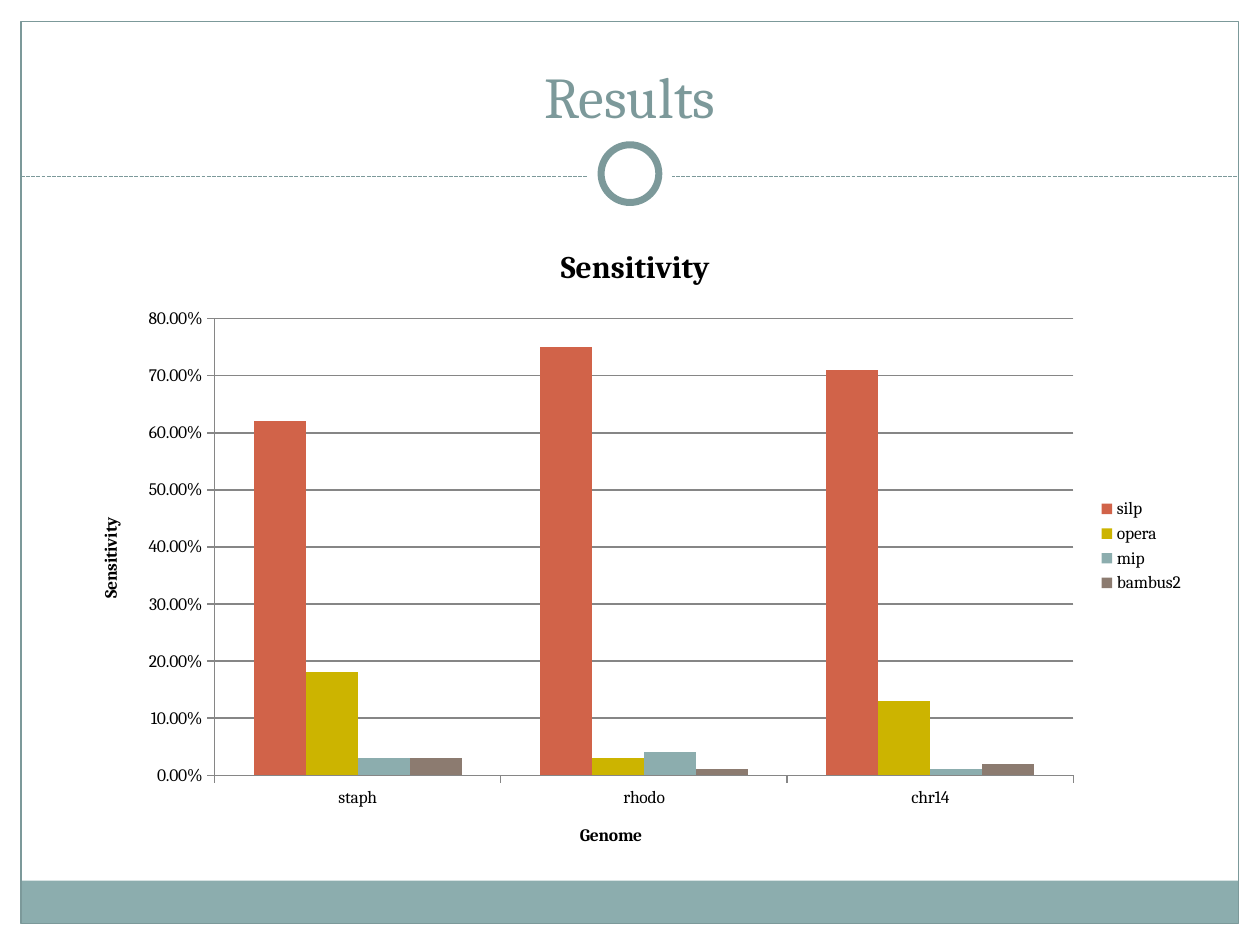
from dataclasses import dataclass

from lxml.etree import SubElement
from pptx import Presentation
from pptx.chart.data import CategoryChartData
from pptx.dml.color import RGBColor
from pptx.enum.chart import XL_CHART_TYPE, XL_LEGEND_POSITION, XL_TICK_MARK
from pptx.enum.dml import MSO_LINE
from pptx.enum.shapes import MSO_CONNECTOR, MSO_SHAPE
from pptx.enum.text import MSO_ANCHOR, PP_ALIGN
from pptx.oxml.ns import qn
from pptx.util import Pt


@dataclass(frozen=True)
class Theme:
    """Colours, font and type sizes of the slide."""
    font: str = "Cambria"
    accent: str = "7C999A"
    band: str = "8CADAE"
    paper: str = "FFFFFF"
    ink: str = "000000"
    grid: str = "868686"
    series: tuple = ("D16349", "CCB400", "8CADAE", "8C7B70")
    title_size: float = 33
    chart_title_size: float = 18
    chart_size: float = 10
    thin: float = 0.75
    ring: float = 4


THEME = Theme()
GENOMES = ("staph", "rhodo", "chr14")
SENSITIVITY = {
    "silp": (0.62, 0.75, 0.71),
    "opera": (0.18, 0.03, 0.13),
    "mip": (0.03, 0.04, 0.01),
    "bambus2": (0.03, 0.01, 0.02),
}


def style_font(font, size, color, bold=False):
    """Set the theme font with a size, colour and weight."""
    font.name = THEME.font
    font.size = Pt(size)
    font.bold = bold
    font.color.rgb = RGBColor.from_string(color)


def write_text(frame, text, size, color=THEME.ink, bold=False, align=PP_ALIGN.CENTER):
    """Write one formatted line into a text frame."""
    paragraph = frame.paragraphs[0]
    paragraph.alignment = align
    run = paragraph.add_run()
    run.text = text
    style_font(run.font, size, color, bold)


def style_line(line, color, width):
    """Give a line a solid colour and a width."""
    line.color.rgb = RGBColor.from_string(color)
    line.width = Pt(width)


def add_block(slide, kind, box, fill=None, line=None, width=THEME.thin):
    """Add a preset shape with an optional fill and outline."""
    shape = slide.shapes.add_shape(kind, *map(Pt, box))
    shape.shadow.inherit = False
    if fill:
        shape.fill.solid()
        shape.fill.fore_color.rgb = RGBColor.from_string(fill)
    else:
        shape.fill.background()
    if line:
        style_line(shape.line, line, width)
    else:
        shape.line.fill.background()


def add_frame(slide, box, band_height):
    """Draw the page border and the band along its foot."""
    left, top, width, height = box
    band = (left, top + height - band_height, width, band_height)
    add_block(slide, MSO_SHAPE.RECTANGLE, band, fill=THEME.band)
    add_block(slide, MSO_SHAPE.RECTANGLE, box, line=THEME.accent)


def add_divider(slide, left, width, rule_y, ring_y):
    """Draw the dashed rule with a ring at its centre."""
    rule = slide.shapes.add_connector(
        MSO_CONNECTOR.STRAIGHT, Pt(left), Pt(rule_y), Pt(left + width), Pt(rule_y))
    style_line(rule.line, THEME.accent, THEME.thin)
    rule.line.dash_style = MSO_LINE.SQUARE_DOT
    SubElement(rule._element.spPr, qn("a:effectLst"))
    center = left + width / 2
    for diameter, outline in ((48, None), (33, THEME.accent)):
        box = (center - diameter / 2, ring_y - diameter / 2, diameter, diameter)
        add_block(slide, MSO_SHAPE.OVAL, box, THEME.paper, outline, THEME.ring)


def add_heading(slide, box, text):
    """Place the slide heading at the foot of its box."""
    frame = slide.shapes.add_textbox(*map(Pt, box)).text_frame
    frame.word_wrap = True
    frame.vertical_anchor = MSO_ANCHOR.BOTTOM
    write_text(frame, text, THEME.title_size, THEME.accent)


def style_axis(axis, title):
    """Title an axis and style its line and ticks."""
    write_text(axis.axis_title.text_frame, title, THEME.chart_size, bold=True)
    axis.major_tick_mark = XL_TICK_MARK.OUTSIDE
    axis.minor_tick_mark = XL_TICK_MARK.NONE
    style_font(axis.tick_labels.font, THEME.chart_size, THEME.ink)
    style_line(axis.format.line, THEME.grid, THEME.thin)


def add_sensitivity_chart(slide, box):
    """Place the clustered columns of sensitivity by genome."""
    data = CategoryChartData(number_format="0.00%")
    data.categories = GENOMES
    for name, values in SENSITIVITY.items():
        data.add_series(name, values)
    chart = slide.shapes.add_chart(
        XL_CHART_TYPE.COLUMN_CLUSTERED, *map(Pt, box), data).chart
    style_font(chart.font, THEME.chart_size, THEME.ink)
    chart.has_title = True
    write_text(chart.chart_title.text_frame, "Sensitivity",
               THEME.chart_title_size, bold=True)
    chart.chart_title.include_in_layout = False
    chart.has_legend = True
    chart.legend.position = XL_LEGEND_POSITION.RIGHT
    chart.legend.include_in_layout = False
    style_font(chart.legend.font, THEME.chart_size, THEME.ink)

    style_axis(chart.category_axis, "Genome")
    value_axis = chart.value_axis
    style_axis(value_axis, "Sensitivity")
    value_axis.minimum_scale = 0
    value_axis.maximum_scale = 0.8
    value_axis.major_unit = 0.1
    value_axis.tick_labels.number_format = "0.00%"
    value_axis.tick_labels.number_format_is_linked = False
    value_axis.has_major_gridlines = True
    style_line(value_axis.major_gridlines.format.line, THEME.grid, THEME.thin)

    plot = chart.plots[0]
    plot.gap_width = 150
    plot.overlap = 0
    plot.vary_by_categories = False
    for series, color in zip(plot.series, THEME.series):
        series.format.fill.solid()
        series.format.fill.fore_color.rgb = RGBColor.from_string(color)
        series.invert_if_negative = False


def main():
    """Build the results slide and save it."""
    presentation = Presentation()
    presentation.slide_width = Pt(720)
    presentation.slide_height = Pt(540)
    slide = presentation.slides.add_slide(presentation.slide_layouts[6])
    add_frame(slide, (12, 12.2, 695.6, 515.5), band_height=24.5)
    add_divider(slide, left=12, width=696, rule_y=100.8, ring_y=99.25)
    add_heading(slide, (24, 18, 672, 60), "Results")
    add_sensitivity_chart(slide, (42, 126, 642, 372))
    presentation.save("out.pptx")


if __name__ == "__main__":
    main()
